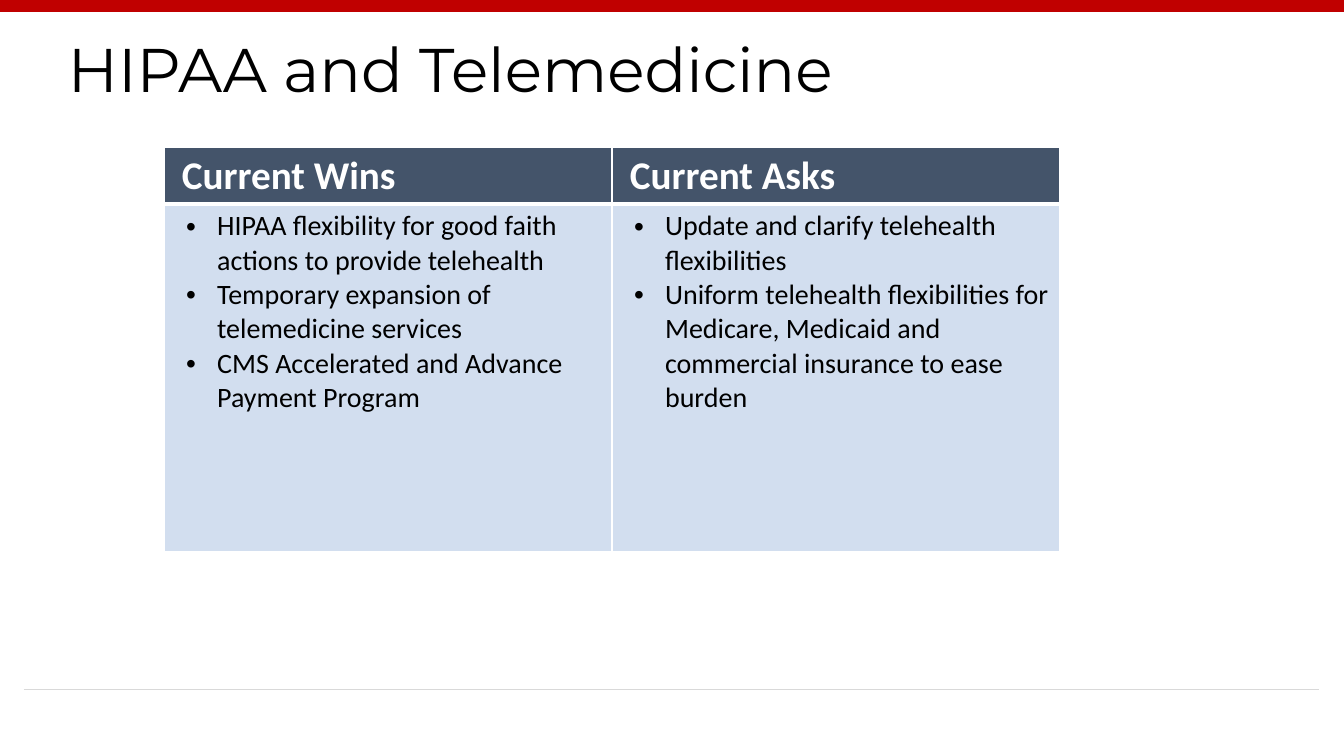
from lxml import etree
from pptx import Presentation
from pptx.dml.color import RGBColor
from pptx.enum.shapes import MSO_CONNECTOR
from pptx.enum.text import MSO_ANCHOR, PP_ALIGN
from pptx.oxml.ns import qn
from pptx.util import Pt

# Content
TITLE = "HIPAA and Telemedicine"
COLUMNS = [
    ("Current Wins", [
        "HIPAA flexibility for good faith actions to provide telehealth",
        "Temporary expansion of telemedicine services",
        "CMS Accelerated and Advance Payment Program",
    ]),
    ("Current Asks", [
        "Update and clarify telehealth flexibilities",
        "Uniform telehealth flexibilities for Medicare, Medicaid and "
        "commercial insurance to ease burden",
    ]),
]
COLORS = {"red": "C00000", "rule": "D9D9D9", "header": "44546A",
          "body": "D2DEEF", "white": "FFFFFF", "black": "000000"}

# Layout in px: rules are (left, right, y, color, points)
SLIDE_WIDTH, SLIDE_HEIGHT = 1344, 756
RULES = [(0, SLIDE_WIDTH, 6, "red", 9), (24, 1319, 689, "rule", 0.5)]
TITLE_BOX = (58, 0, 1159, 146)
TABLE_LEFT, TABLE_TOP, COLUMN_WIDTH = 164, 147, 448
ROW_HEIGHTS = [57, 347]
HEADER_INSET = 18
BULLET_LEFT, BULLET_HANG = 43, 31
EMU_PER_PX = 914400 / 100.8


def px(length):
    return round(length * EMU_PER_PX)


def rgb(name):
    return RGBColor.from_string(COLORS[name])


def set_font(paragraph, name, size, color, bold=False):
    font = paragraph.font
    font.name, font.size, font.bold = name, Pt(size), bold
    font.color.rgb = rgb(color)


def add_rule(slide, left, right, y, color, points):
    rule = slide.shapes.add_connector(
        MSO_CONNECTOR.STRAIGHT, px(left), px(y), px(right), px(y))
    rule.line.color.rgb = rgb(color)
    rule.line.width = Pt(points)
    etree.SubElement(rule._element.spPr, qn("a:effectLst"))


def style_cell(cell, fill, bottom_width):
    properties = cell._tc.get_or_add_tcPr()
    for side, width in (("L", 1), ("R", 1), ("T", 1), ("B", bottom_width)):
        border = etree.SubElement(properties, qn(f"a:ln{side}"), w=str(Pt(width)))
        solid = etree.SubElement(border, qn("a:solidFill"))
        etree.SubElement(solid, qn("a:srgbClr"), val=COLORS["white"])
    cell.fill.solid()
    cell.fill.fore_color.rgb = rgb(fill)


def add_bullet(paragraph):
    properties = paragraph._p.get_or_add_pPr()
    properties.set("marL", str(px(BULLET_LEFT)))
    properties.set("indent", str(-px(BULLET_HANG)))
    etree.SubElement(properties, qn("a:buFont"), typeface="Arial")
    etree.SubElement(properties, qn("a:buChar"), char="•")


def add_title(slide):
    frame = slide.shapes.add_textbox(*map(px, TITLE_BOX)).text_frame
    frame.word_wrap = True
    frame.vertical_anchor = MSO_ANCHOR.MIDDLE
    paragraph = frame.paragraphs[0]
    paragraph.text = TITLE
    paragraph.alignment = PP_ALIGN.LEFT
    paragraph.line_spacing = 0.9
    set_font(paragraph, "Montserrat", 44, "black")


def add_comparison(slide):
    table = slide.shapes.add_table(
        len(ROW_HEIGHTS), len(COLUMNS), px(TABLE_LEFT), px(TABLE_TOP),
        px(COLUMN_WIDTH * len(COLUMNS)), px(sum(ROW_HEIGHTS))).table
    for row, height in zip(table.rows, ROW_HEIGHTS):
        row.height = px(height)
    for index, (heading, items) in enumerate(COLUMNS):
        table.columns[index].width = px(COLUMN_WIDTH)
        header, body = table.cell(0, index), table.cell(1, index)

        style_cell(header, "header", 3)
        header.margin_left = px(HEADER_INSET)
        header.text = heading
        set_font(header.text_frame.paragraphs[0], "Calibri", 28, "white", True)

        style_cell(body, "body", 1)
        body.text = "\n".join(items)
        for paragraph in body.text_frame.paragraphs:
            add_bullet(paragraph)
            set_font(paragraph, "Calibri", 20, "black")


def main():
    presentation = Presentation()
    presentation.slide_width = px(SLIDE_WIDTH)
    presentation.slide_height = px(SLIDE_HEIGHT)
    slide = presentation.slides.add_slide(presentation.slide_layouts[6])
    for rule in RULES:
        add_rule(slide, *rule)
    add_title(slide)
    add_comparison(slide)
    presentation.save("out.pptx")


if __name__ == "__main__":
    main()
